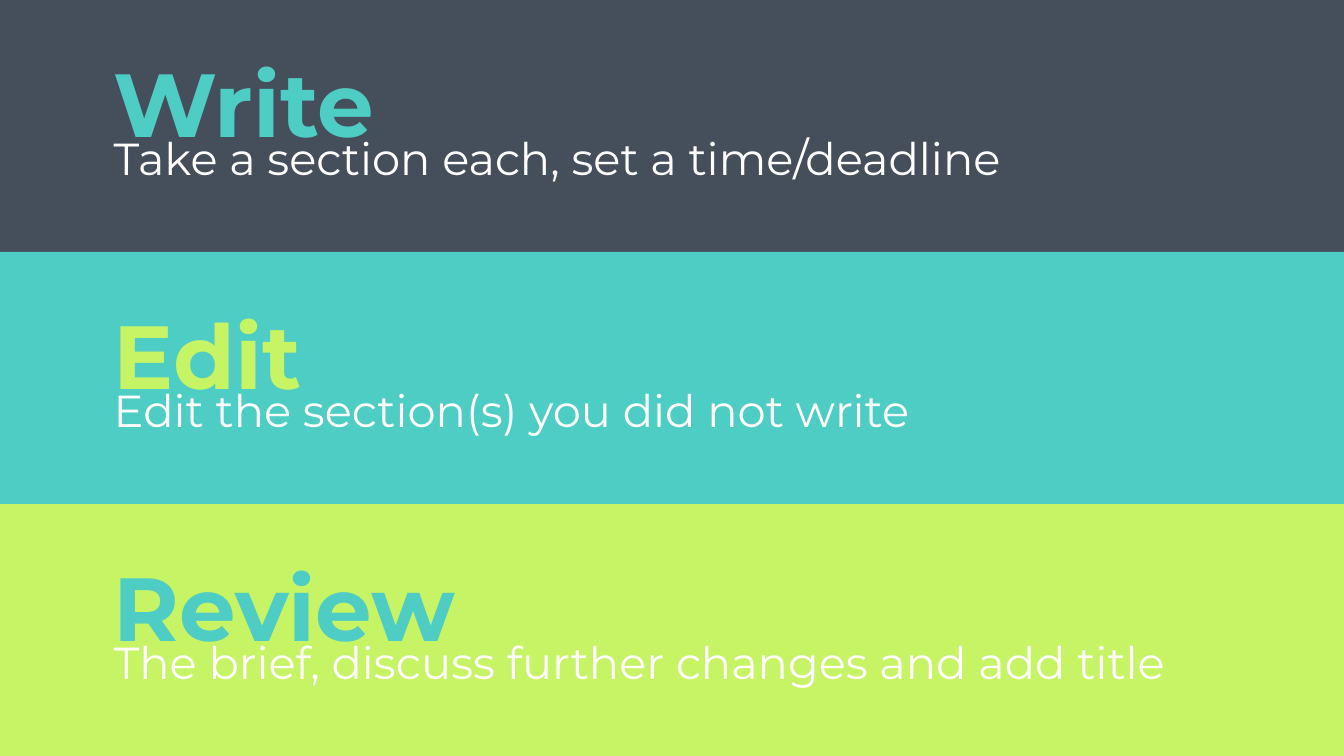
from pptx import Presentation
from pptx.dml.color import RGBColor
from pptx.enum import shapes, text
from pptx.util import Cm, Pt

SLIDE_WIDTH, SLIDE_HEIGHT = 25.4, 14.29
BAND_HEIGHT = SLIDE_HEIGHT / 3
LEFT = 1.9
TEXT_WIDTH = 21.59
SLATE, TEAL, LIME, WHITE = "454F5B", "4ECDC4", "C7F464", "FFFFFF"

# heading, heading colour, description, description width
STEPS = [
    ("Write", TEAL, "Take a section each, set a time/deadline", TEXT_WIDTH),
    ("Edit", LIME, "Edit the section(s) you did not write", TEXT_WIDTH),
    ("Review", TEAL, "The brief, discuss further changes and add title", 22.89),
]


def set_fill(fill, color):
    fill.solid()
    fill.fore_color.rgb = RGBColor.from_string(color)


def add_band(slide, top, color):
    band = slide.shapes.add_shape(
        shapes.MSO_SHAPE.RECTANGLE, 0, Cm(top), Cm(SLIDE_WIDTH), Cm(BAND_HEIGHT))
    band.shadow.inherit = False
    set_fill(band.fill, color)
    band.line.fill.background()


def place(shape, top, width, height):
    shape.left, shape.top = Cm(LEFT), Cm(top)
    shape.width, shape.height = Cm(width), Cm(height)


def format_text(shape, content, size, color, bold, anchor, space_before):
    frame = shape.text_frame
    frame.text = content
    frame.word_wrap = True
    frame.auto_size = text.MSO_AUTO_SIZE.NONE
    frame.vertical_anchor = anchor
    frame.margin_left = frame.margin_right = Cm(0.25)
    frame.margin_top = frame.margin_bottom = Cm(0.25)
    paragraph = frame.paragraphs[0]
    paragraph.alignment = text.PP_ALIGN.LEFT
    paragraph.line_spacing = 1.0
    paragraph.space_before = Pt(space_before)
    font = paragraph.runs[0].font
    font.name, font.size, font.bold = "Montserrat", Pt(size), bold
    font.color.rgb = RGBColor.from_string(color)


def add_heading(shape, top, content, color):
    place(shape, top + 0.69, TEXT_WIDTH, 2.49)
    format_text(shape, content, 48, color, True, text.MSO_ANCHOR.BOTTOM, 0)


def add_description(shape, top, content, width):
    place(shape, top + 2.23, width, 1.3)
    format_text(shape, content, 24, WHITE, False, text.MSO_ANCHOR.TOP, 6)


def add_text_box(slide):
    return slide.shapes.add_textbox(0, 0, 0, 0)


def main():
    presentation = Presentation()
    presentation.slide_width = Cm(SLIDE_WIDTH)
    presentation.slide_height = Cm(SLIDE_HEIGHT)
    slide = presentation.slides.add_slide(presentation.slide_layouts[5])
    set_fill(slide.background.fill, LIME)

    for index, color in enumerate((SLATE, TEAL)):
        add_band(slide, index * BAND_HEIGHT, color)

    # Bring the title in front of the bands.
    title = slide.shapes.title
    title.element.getparent().append(title.element)

    for index, (heading, color, description, width) in enumerate(STEPS):
        top = index * BAND_HEIGHT
        heading_shape = title if index == 0 else add_text_box(slide)
        add_heading(heading_shape, top, heading, color)
        add_description(add_text_box(slide), top, description, width)

    presentation.save("out.pptx")


if __name__ == "__main__":
    main()
